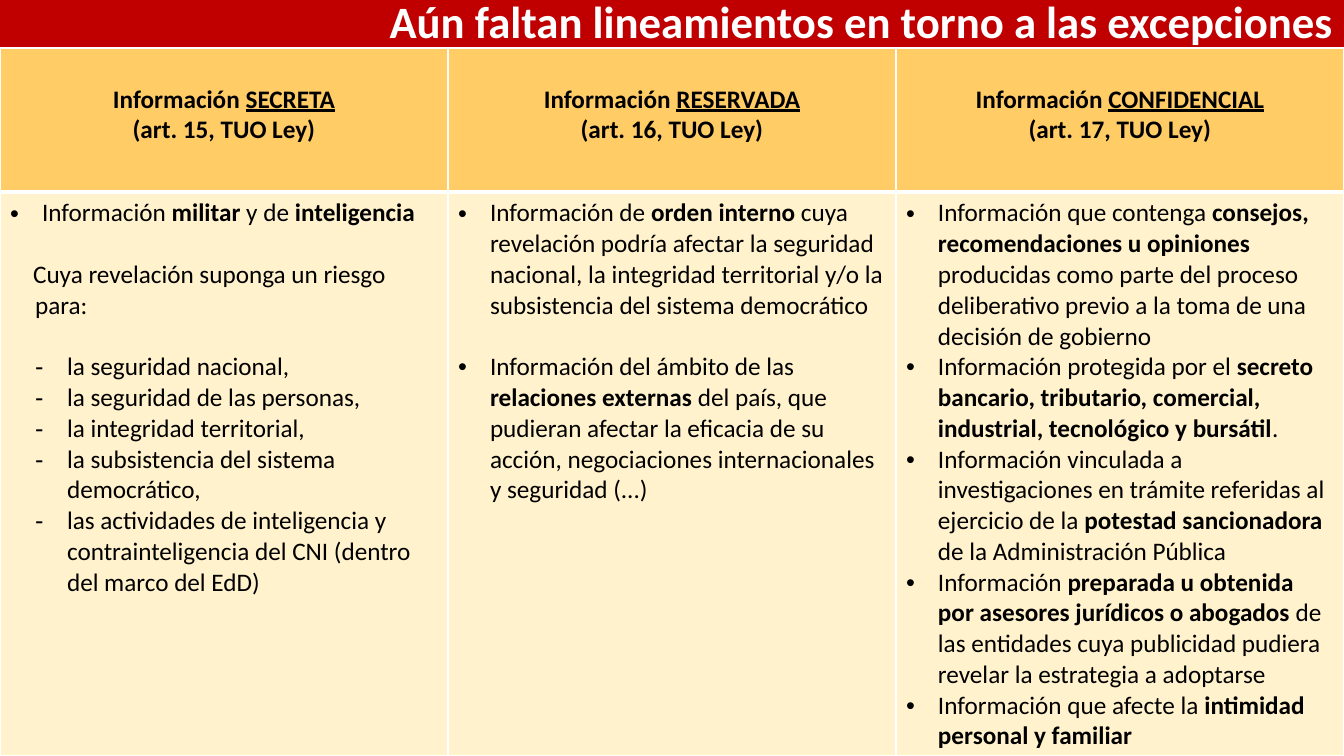
from dataclasses import dataclass

from lxml.etree import SubElement
from pptx import Presentation
from pptx.dml.color import RGBColor
from pptx.enum.shapes import MSO_SHAPE as Shape
from pptx.enum.text import MSO_ANCHOR as Anchor, PP_ALIGN as Align
from pptx.oxml.ns import qn
from pptx.util import Emu, Pt


@dataclass(frozen=True)
class Theme:
    font: str = "Calibri"
    title_size: int = 32
    text_size: int = 18
    red: str = "C00000"
    amber: str = "FFCC66"
    cream: str = "FFF2CC"
    white: str = "FFFFFF"
    black: str = "000000"


theme = Theme()
PX = 914400 / 100.8
WIDTH, HEIGHT = 1344, 756
TITLE_HEIGHT, HEADER_HEIGHT = 48, 144
INSET = 10
BLANK_LINE = Pt(22)

# Paragraph styles: bullet, left margin and first-line indent in px
DOT = ("•", 32, -32)
DASH = ("-", 57, -32)
PLAIN = (None, 25, -2)

# Asterisks enclose the emphasised words; the last item asks for a gap above
COLUMNS = [
    (["Información *SECRETA*", "(art. 15, TUO Ley)"], [
        (DOT, "Información *militar* y de *inteligencia*", False),
        (PLAIN, "Cuya revelación suponga un riesgo para:", True),
        (DASH, "la seguridad nacional,", True),
        (DASH, "la seguridad de las personas,", False),
        (DASH, "la integridad territorial,", False),
        (DASH, "la subsistencia del sistema democrático,", False),
        (DASH, "las actividades de inteligencia y contrainteligencia del CNI "
               "(dentro del marco del EdD)", False),
    ]),
    (["Información *RESERVADA*", "(art. 16, TUO Ley)"], [
        (DOT, "Información de *orden interno *cuya revelación podría afectar la "
              "seguridad nacional, la integridad territorial y/o la subsistencia "
              "del sistema democrático", False),
        (DOT, "Información del ámbito de las *relaciones externas *del país, que "
              "pudieran afectar la eficacia de su acción, negociaciones "
              "internacionales y seguridad (...)", True),
    ]),
    (["Información *CONFIDENCIAL*", "(art. 17, TUO Ley)"], [
        (DOT, "Información que contenga *consejos, recomendaciones u opiniones* "
              "producidas como parte del proceso deliberativo previo a la toma de "
              "una decisión de gobierno", False),
        (DOT, "Información protegida por el *secreto bancario, tributario, "
              "comercial, industrial, tecnológico y bursátil*.", False),
        (DOT, "Información vinculada a investigaciones en trámite referidas al "
              "ejercicio de la *potestad sancionadora *de la Administración "
              "Pública", False),
        (DOT, "Información *preparada u obtenida por asesores jurídicos o "
              "abogados* de las entidades cuya publicidad pudiera revelar la "
              "estrategia a adoptarse", False),
        (DOT, "Información que afecte la *intimidad personal y familiar*", False),
    ]),
]


def add_run(para, text, size, color, bold, underline=False):
    span = para.add_run()
    span.text = text
    font = span.font
    font.name, font.size = theme.font, Pt(size)
    font.bold, font.underline = bold, underline
    font.color.rgb = RGBColor.from_string(color)


def style_cell(cell, fill, top, bottom):
    """Fill the cell and give it white borders, 1 pt at the sides."""
    properties = cell._tc.get_or_add_tcPr()
    for side, points in (("L", 1), ("R", 1), ("T", top), ("B", bottom)):
        line = SubElement(properties, qn(f"a:ln{side}"), w=str(Pt(points)))
        paint = SubElement(line, qn("a:solidFill"))
        SubElement(paint, qn("a:srgbClr"), val=theme.white)
    cell.fill.solid()
    cell.fill.fore_color.rgb = RGBColor.from_string(fill)


deck = Presentation()
deck.slide_width, deck.slide_height = Emu(round(WIDTH * PX)), Emu(round(HEIGHT * PX))
page = deck.slides.add_slide(deck.slide_layouts[6])

# Title bar
bar = page.shapes.add_shape(Shape.RECTANGLE, 0, 0, deck.slide_width,
                            Emu(round(TITLE_HEIGHT * PX)))
bar.shadow.inherit = False
bar.fill.solid()
bar.fill.fore_color.rgb = RGBColor.from_string(theme.red)
bar.line.fill.background()
frame = bar.text_frame
frame.word_wrap = True
frame.vertical_anchor = Anchor.MIDDLE
frame.margin_top = frame.margin_bottom = 0
frame.margin_right = Emu(round(INSET * PX))
para = frame.paragraphs[0]
para.alignment, para.line_spacing = Align.RIGHT, 0.9
add_run(para, "Aún faltan lineamientos en torno a las excepciones",
        theme.title_size, theme.white, bold=True)

# Table of exceptions
table = page.shapes.add_table(
    2, len(COLUMNS), 0, Emu(round(TITLE_HEIGHT * PX)), deck.slide_width,
    Emu(round((HEIGHT - TITLE_HEIGHT) * PX))).table
table.horz_banding = False
table.rows[0].height = Emu(round(HEADER_HEIGHT * PX))
table.rows[1].height = Emu(round((HEIGHT - TITLE_HEIGHT - HEADER_HEIGHT) * PX))

for index, (heading, items) in enumerate(COLUMNS):
    table.columns[index].width = Emu(round(WIDTH / len(COLUMNS) * PX))

    header = table.cell(0, index)
    style_cell(header, theme.amber, top=1, bottom=3)
    header.margin_top = Emu(round(36 * PX))
    for number, text in enumerate(heading):
        frame = header.text_frame
        para = frame.add_paragraph() if number else frame.paragraphs[0]
        para.alignment = Align.CENTER
        for part, words in enumerate(text.split("*")):
            if words:
                add_run(para, words, theme.text_size, theme.black,
                        bold=True, underline=part % 2 == 1)

    body = table.cell(1, index)
    style_cell(body, theme.cream, top=3, bottom=1)
    body.margin_top, body.margin_bottom = Emu(round(6 * PX)), 0
    for number, ((bullet, margin, indent), text, gap) in enumerate(items):
        frame = body.text_frame
        para = frame.add_paragraph() if number else frame.paragraphs[0]
        if gap:
            para.space_before = BLANK_LINE
        properties = para._p.get_or_add_pPr()
        properties.set("marL", str(round(margin * PX)))
        properties.set("indent", str(round(indent * PX)))
        if bullet:
            SubElement(properties, qn("a:buFont"), typeface="Arial")
            SubElement(properties, qn("a:buChar"), char=bullet)
        for part, words in enumerate(text.split("*")):
            if words:
                add_run(para, words, theme.text_size, theme.black, bold=part % 2 == 1)

deck.save("out.pptx")
